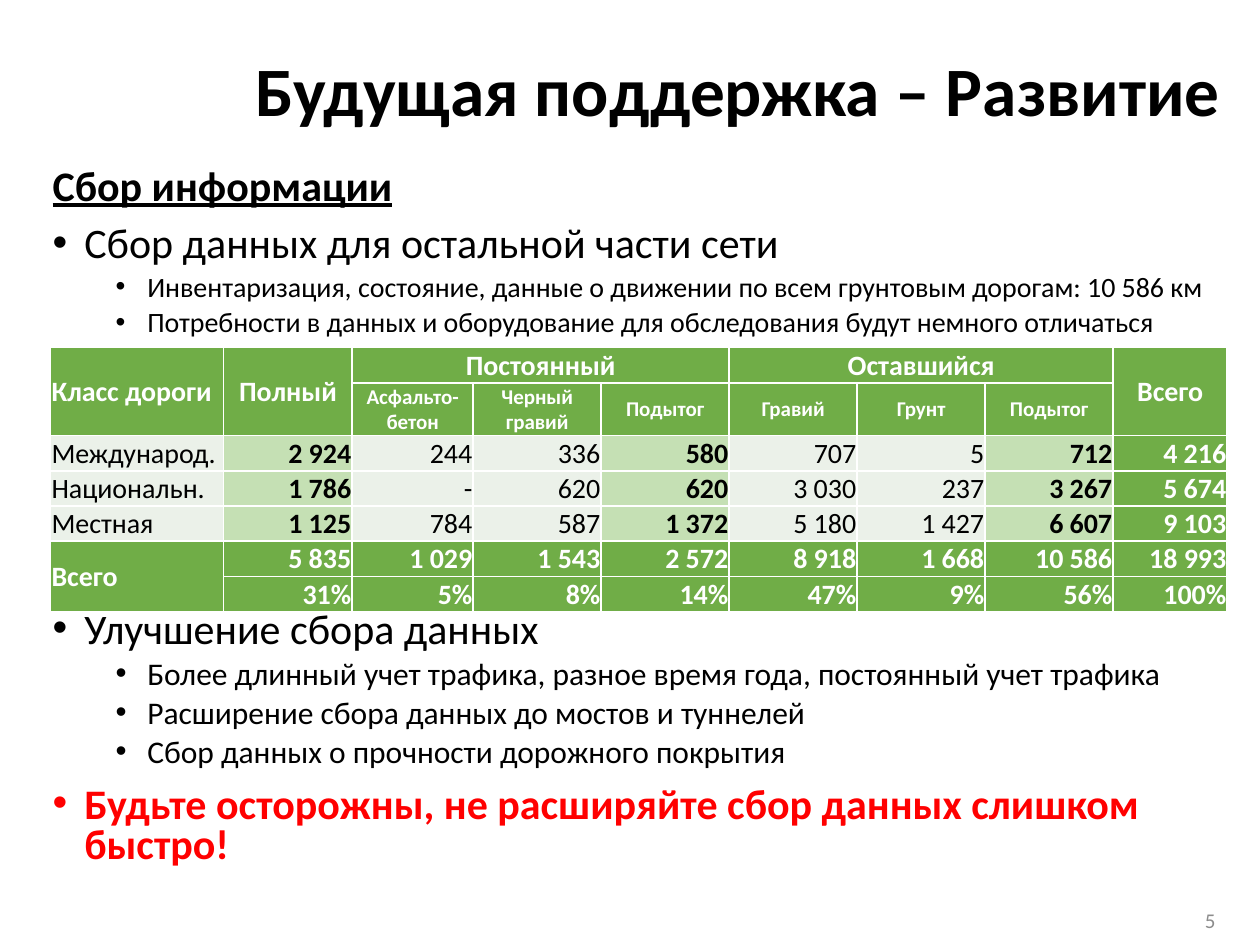
from lxml import etree
from pptx import Presentation
from pptx.dml.color import RGBColor
from pptx.enum import text
from pptx.oxml import ns
from pptx.util import Cm, Pt

FONT = "Calibri"
BLACK, WHITE, RED, GREY = "000000", "FFFFFF", "FF0000", "8C8C8C"
GREEN, LIGHT_GREEN, PALE = "70AD47", "C5E0B4", "EBF1E9"
LEFT, CENTER, RIGHT = text.PP_ALIGN.LEFT, text.PP_ALIGN.CENTER, text.PP_ALIGN.RIGHT

TITLE = "Будущая поддержка – Развитие"
COLLECTION = [
    ("Сбор информации", dict(size=24, bold=True, underline=True)),
    ("Сбор данных для остальной части сети", dict(size=24, bullet=0)),
    ("Инвентаризация, состояние, данные о движении по всем грунтовым дорогам: 10 586 км",
     dict(size=16, bullet=1)),
    ("Потребности в данных и оборудование для обследования будут немного отличаться",
     dict(size=16, bullet=1)),
]
IMPROVEMENT = [
    ("Улучшение сбора данных", dict(size=24, bullet=0)),
    ("Более длинный учет трафика, разное время года, постоянный учет трафика",
     dict(size=18, bullet=1)),
    ("Расширение сбора данных до мостов и туннелей", dict(size=18, bullet=1)),
    ("Сбор данных о прочности дорожного покрытия", dict(size=18, bullet=1)),
    ("Будьте осторожны, не расширяйте сбор данных слишком быстро!",
     dict(size=24, bullet=0, bold=True, color=RED)),
]
ROADS = [
    ["Класс дороги", "Полный", "Постоянный", "", "", "Оставшийся", "", "", "Всего"],
    ["", "", "Асфальто-бетон", "Черный гравий", "Подытог", "Гравий", "Грунт", "Подытог", ""],
    ["Международ.", "2 924", "244", "336", "580", "707", "5", "712", "4 216"],
    ["Национальн.", "1 786", "-", "620", "620", "3 030", "237", "3 267", "5 674"],
    ["Местная", "1 125", "784", "587", "1 372", "5 180", "1 427", "6 607", "9 103"],
    ["Всего", "5 835", "1 029", "1 543", "2 572", "8 918", "1 668", "10 586", "18 993"],
    ["", "31%", "5%", "8%", "14%", "47%", "9%", "56%", "100%"],
]
COLUMN_WIDTHS = [3.49, 2.59, 2.44] + [2.58] * 5 + [2.3]
ROW_HEIGHTS = [0.71, 1.06] + [0.71] * 5
MERGES = [((0, 0), (1, 0)), ((0, 1), (1, 1)), ((0, 2), (0, 4)),
          ((0, 5), (0, 7)), ((0, 8), (1, 8)), ((5, 0), (6, 0))]
HEADER_ROWS, TOTAL_ROWS = (0, 1), (5, 6)
SUBTOTAL_COLUMNS, TOTAL_COLUMN = (1, 4, 7), 8


def rgb(color):
    return RGBColor.from_string(color)


def add_bullet(paragraph, level):
    paragraph.level = level
    properties = paragraph._p.get_or_add_pPr()
    properties.set("marL", str(Cm(0.64 + 1.27 * level)))
    properties.set("indent", str(-Cm(0.64)))
    font = etree.SubElement(properties, ns.qn("a:buFont"))
    font.set("typeface", "Arial")
    etree.SubElement(properties, ns.qn("a:buChar")).set("char", "•")


def write(frame, content, size=16, color=BLACK, bold=False, underline=False,
          align=LEFT, bullet=None, spacing=None):
    """Fill the first paragraph of the frame, or append one if it is in use."""
    first = not frame.text
    paragraph = frame.paragraphs[0] if first else frame.add_paragraph()
    if bullet is not None:
        add_bullet(paragraph, bullet)
    paragraph.alignment = align
    paragraph.space_before = Pt(0 if first else 5 if bullet else 10)
    if spacing:
        paragraph.line_spacing = spacing
    run = paragraph.add_run()
    run.text = content
    run.font.name = FONT
    run.font.size = Pt(size)
    run.font.bold = bold
    run.font.underline = underline
    run.font.color.rgb = rgb(color)


def place_title(slide, left, top, width, height):
    title = slide.shapes.title
    title.left, title.top, title.width, title.height = map(Cm, (left, top, width, height))
    frame = title.text_frame
    frame.auto_size = text.MSO_AUTO_SIZE.NONE
    frame.vertical_anchor = text.MSO_ANCHOR.MIDDLE
    write(frame, TITLE, size=39.6, bold=True, spacing=0.9)


def add_text_box(slide, left, top, width, height, anchor=text.MSO_ANCHOR.TOP):
    frame = slide.shapes.add_textbox(*map(Cm, (left, top, width, height))).text_frame
    frame.word_wrap = True
    frame.vertical_anchor = anchor
    return frame


def add_points(slide, points, left, top, width, height):
    frame = add_text_box(slide, left, top, width, height)
    for content, style in points:
        write(frame, content, spacing=0.8, **style)


def set_borders(cell, color, width):
    properties = cell._tc.get_or_add_tcPr()
    for position, side in enumerate(("lnL", "lnR", "lnT", "lnB")):
        line = etree.Element(ns.qn(f"a:{side}"), w=str(Pt(width)))
        fill = etree.SubElement(line, ns.qn("a:solidFill"))
        etree.SubElement(fill, ns.qn("a:srgbClr")).set("val", color)
        properties.insert(position, line)


def cell_style(row, column):
    """Return the fill and the text format that a table position calls for."""
    if row in HEADER_ROWS:
        return GREEN, dict(size=12 if row else 16, color=WHITE, bold=True,
                           align=CENTER if column else LEFT)
    align = RIGHT if column else LEFT
    if row in TOTAL_ROWS or column == TOTAL_COLUMN:
        return GREEN, dict(color=WHITE, bold=True, align=align)
    if column in SUBTOTAL_COLUMNS:
        return LIGHT_GREEN, dict(bold=True, align=align)
    return PALE, dict(align=align)


def add_road_table(slide, left, top):
    table = slide.shapes.add_table(
        len(ROADS), len(COLUMN_WIDTHS), Cm(left), Cm(top),
        Cm(sum(COLUMN_WIDTHS)), Cm(sum(ROW_HEIGHTS))).table
    for column, width in zip(table.columns, COLUMN_WIDTHS):
        column.width = Cm(width)
    for row, height in zip(table.rows, ROW_HEIGHTS):
        row.height = Cm(height)
    for start, end in MERGES:
        table.cell(*start).merge(table.cell(*end))
    for row, values in enumerate(ROADS):
        for column, value in enumerate(values):
            cell = table.cell(row, column)
            fill, style = cell_style(row, column)
            cell.fill.solid()
            cell.fill.fore_color.rgb = rgb(fill)
            set_borders(cell, WHITE, 1)
            cell.margin_left = cell.margin_right = cell.margin_top = Cm(0.02)
            cell.margin_bottom = 0
            cell.vertical_anchor = text.MSO_ANCHOR.MIDDLE
            if value:
                write(cell.text_frame, value, **style)


def add_slide_number(slide, left, top, width, height):
    frame = add_text_box(slide, left, top, width, height, text.MSO_ANCHOR.MIDDLE)
    write(frame, "5", size=12, color=GREY, align=CENTER)


def main():
    presentation = Presentation()
    presentation.slide_width, presentation.slide_height = Cm(25.4), Cm(19.05)
    slide = presentation.slides.add_slide(presentation.slide_layouts[5])
    place_title(slide, 4.9, 1.02, 20.5, 1.75)
    add_points(slide, COLLECTION, 0.81, 3.28, 24.59, 3.7)
    add_points(slide, IMPROVEMENT, 0.81, 12.22, 24.59, 5.6)
    add_road_table(slide, 1.02, 7.01)
    add_slide_number(slide, 23.39, 18.06, 2.01, 0.99)
    presentation.save("out.pptx")


if __name__ == "__main__":
    main()
